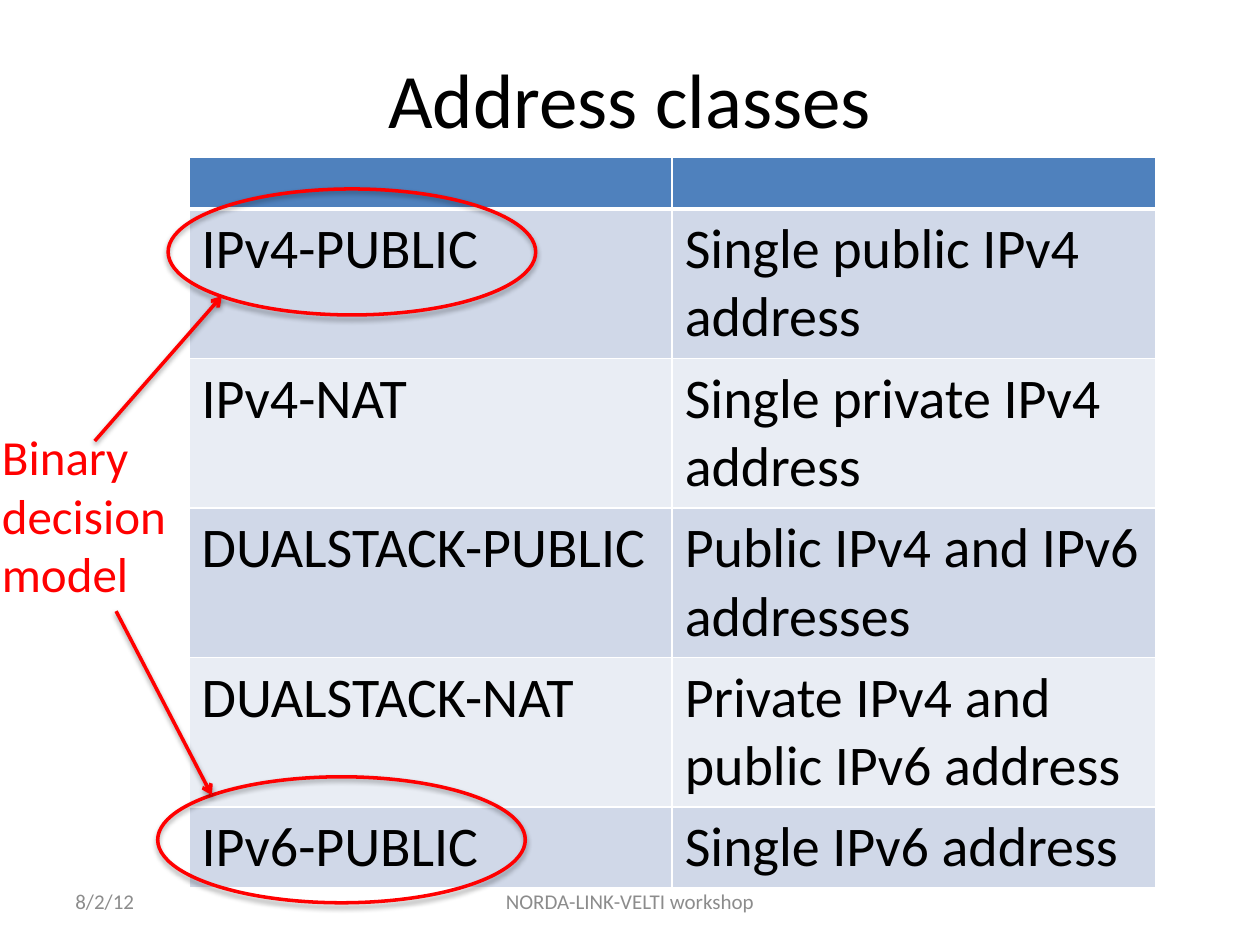
from lxml import etree
from pptx import Presentation
from pptx.dml.color import RGBColor
from pptx.enum import shapes, text
from pptx.oxml import ns
from pptx.util import Cm, Pt

RED = "FF0000"
GREY = "8C8C8C"
BLACK = "000000"
WHITE = "FFFFFF"
HEAD = "4F81BD"
BANDS = ("D0D8E8", "E9EDF4")
ROWS = (
    ("", ""),
    ("IPv4-PUBLIC", "Single public IPv4 address"),
    ("IPv4-NAT", "Single private IPv4 address"),
    ("DUALSTACK-PUBLIC", "Public IPv4 and IPv6 addresses"),
    ("DUALSTACK-NAT", "Private IPv4 and public IPv6 address"),
    ("IPv6-PUBLIC", "Single IPv6 address"),
)
HEIGHTS = [1.02] + [2.41] * 4 + [1.32]
LEFT, MID = text.PP_ALIGN.LEFT, text.PP_ALIGN.CENTER
TOP, CORE = text.MSO_ANCHOR.TOP, text.MSO_ANCHOR.MIDDLE


def color(code):
    return RGBColor.from_string(code)


def node(base, tag, **attrs):
    return etree.SubElement(base, ns.qn(tag), {k: str(v) for k, v in attrs.items()})


def write(frame, words, size, tint, align=LEFT):
    frame.text = words
    para = frame.paragraphs[0]
    para.alignment = align
    for key, value in {"name": "Calibri", "size": Pt(size), "bold": False}.items():
        setattr(para.runs[0].font, key, value)
    para.runs[0].font.color.rgb = color(tint)


def add_title(slide, words):
    title = slide.shapes.title
    box = {"left": 1.27, "top": 0.64, "width": 22.86, "height": 2.67}
    for key, value in box.items():
        setattr(title, key, Cm(value))
    title.text_frame.vertical_anchor = CORE
    write(title.text_frame, words, 44, BLACK, MID)


def add_label(slide, words, box, size, tint, align=LEFT, anchor=TOP):
    frame = slide.shapes.add_textbox(*map(Cm, box)).text_frame
    frame.word_wrap = True
    frame.vertical_anchor = anchor
    write(frame, words, size, tint, align)


def add_edges(cell, head):
    props = cell._tc.get_or_add_tcPr()
    for side in "LRTB":
        width = Pt(3 if head and side == "B" else 1)
        edge = node(props, f"a:ln{side}", w=int(width))
        node(node(edge, "a:solidFill"), "a:srgbClr", val=WHITE)


def add_grid(slide):
    box = map(Cm, (3.81, 3.18, 19.48, sum(HEIGHTS)))
    grid = slide.shapes.add_table(len(ROWS), 2, *box).table
    for row, high in zip(grid.rows, HEIGHTS):
        row.height = Cm(high)
    for r, row in enumerate(ROWS):
        for c, words in enumerate(row):
            cell = grid.cell(r, c)
            add_edges(cell, r == 0)
            cell.fill.solid()
            cell.fill.fore_color.rgb = color(BANDS[(r - 1) % 2] if r else HEAD)
            if words:
                write(cell.text_frame, words, 32, BLACK)


def add_shade(shape, gap, alpha):
    effect = node(shape._element.spPr, "a:effectLst")
    shade = node(effect, "a:outerShdw", blurRad=int(Pt(3.1)), dist=int(Pt(gap)),
                 dir=5400000, rotWithShape=0)
    tint = node(shade, "a:srgbClr", val=BLACK)
    node(tint, "a:alpha", val=alpha * 1000)


def ink(shape):
    shape.line.color.rgb = color(RED)
    shape.line.width = Pt(2)


def add_ring(slide, left, top):
    box = map(Cm, (left, top, 7.41, 2.54))
    ring = slide.shapes.add_shape(shapes.MSO_SHAPE.OVAL, *box)
    ring.fill.background()
    ink(ring)
    add_shade(ring, 1.8, 35)


def add_arrow(slide, *ends):
    kind = shapes.MSO_CONNECTOR.STRAIGHT
    arrow = slide.shapes.add_connector(kind, *map(Cm, ends))
    ink(arrow)
    node(arrow.line._get_or_add_ln(), "a:tailEnd", type="arrow")
    add_shade(arrow, 1.6, 38)


def main():
    deck = Presentation()
    deck.slide_width, deck.slide_height = Cm(25.4), Cm(19.05)
    slide = deck.slides.add_slide(deck.slide_layouts[5])
    add_title(slide, "Address classes")
    add_grid(slide)
    add_label(slide, "8/2/12", (1.27, 17.65, 5.93, 1.02), 12, GREY, anchor=CORE)
    add_label(slide, "NORDA-LINK-VELTI workshop", (8.68, 17.65, 8.04, 1.02), 12, GREY, MID, CORE)
    add_ring(slide, 3.39, 3.81)
    add_arrow(slide, 1.91, 8.89, 4.47, 5.97)
    add_label(slide, "Binary decision model", (-0.21, 8.47, 5.08, 3.84), 28, RED)
    add_ring(slide, 3.18, 15.66)
    add_arrow(slide, 2.34, 12.32, 4.27, 16.03)
    deck.save("out.pptx")


if __name__ == "__main__":
    main()
